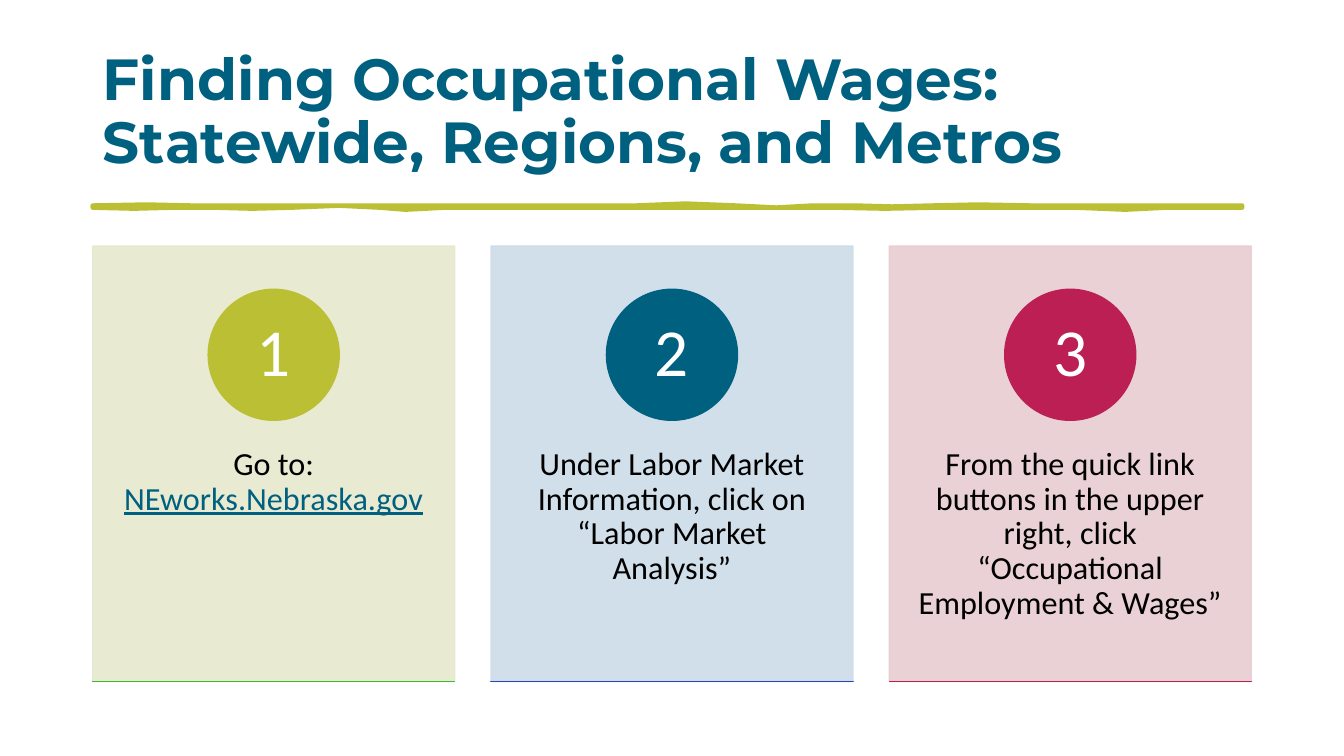
from lxml import etree
from pptx import Presentation
from pptx.dml.color import RGBColor
from pptx.enum.shapes import MSO_SHAPE
from pptx.enum.text import MSO_ANCHOR, MSO_AUTO_SIZE, PP_ALIGN
from pptx.oxml.ns import qn
from pptx.util import Inches, Pt

COLORS = {
    "teal": "00607F", "lime": "BABF33", "crimson": "BB1F53",
    "green": "34BE2F", "blue": "2743BD",
    "pale_lime": "E7E8CE", "pale_blue": "CDDCE8", "pale_rose": "E7CDD1",
    "black": "000000", "white": "FFFFFF",
}

# Card colour, circle colour, base line colour, text, web address
STEPS = [
    ("pale_lime", "lime", "green", "Go to: ", "NEworks.Nebraska.gov"),
    ("pale_blue", "teal", "blue",
     "Under Labor Market Information, click on “Labor Market Analysis”", ""),
    ("pale_rose", "crimson", "crimson",
     "From the quick link buttons in the upper right, click "
     "“Occupational Employment & Wages”", ""),
]

# Brush stroke outline: upper edge from left to right, then lower edge back
STROKE_POINTS = [
    (0.92, 2.04), (1.45, 2.03), (1.9, 2.04), (2.44, 2.04), (3.31, 2.04),
    (3.84, 2.04), (4.6, 2.04), (5.48, 2.04), (5.89, 2.04), (6.31, 2.04),
    (6.8, 2.02), (7.3, 2.04), (7.7, 2.06), (8.06, 2.04), (8.48, 2.04),
    (8.85, 2.05), (9.24, 2.04), (9.7, 2.03), (10.23, 2.04), (10.87, 2.04),
    (11.52, 2.04), (12.32, 2.04), (12.32, 2.06), (11.56, 2.06), (11.16, 2.08),
    (10.68, 2.06), (9.81, 2.06), (9.28, 2.06), (8.78, 2.07), (8.29, 2.06),
    (7.53, 2.06), (7.11, 2.06), (6.35, 2.06), (5.7, 2.06), (5.06, 2.06),
    (4.41, 2.06), (4.02, 2.08), (3.77, 2.06), (3.36, 2.04), (2.89, 2.06),
    (2.5, 2.07), (2.13, 2.06), (1.71, 2.06), (1.33, 2.07), (0.92, 2.06),
]


def rgb(name):
    return RGBColor.from_string(COLORS[name])


def add_text(para, text, font="Calibri", size=23, color="black", bold=False, underline=False):
    span = para.add_run()
    span.text = text
    span.font.name = font
    span.font.size = Pt(size)
    span.font.bold = bold
    span.font.underline = underline
    span.font.color.rgb = rgb(color)


def paint(shape, color, line_width=1):
    shape.shadow.inherit = False
    shape.fill.solid()
    shape.fill.fore_color.rgb = rgb(color)
    shape.line.color.rgb = rgb(color)
    shape.line.width = Pt(line_width)


def add_painted(page, kind, left, top, width, height, color):
    shape = page.shapes.add_shape(
        kind, Inches(left), Inches(top), Inches(width), Inches(height))
    paint(shape, color)
    return shape


def set_frame(frame, anchor, align, side=0.1, end=0.05):
    """Format the text frame and return its first paragraph."""
    frame.word_wrap = True
    frame.auto_size = MSO_AUTO_SIZE.NONE
    frame.vertical_anchor = anchor
    frame.margin_left = frame.margin_right = Inches(side)
    frame.margin_top = frame.margin_bottom = Inches(end)
    para = frame.paragraphs[0]
    para.alignment = align
    para.line_spacing = 0.9
    return para


def add_title(page, left, top, width, height):
    title = page.shapes.title
    title.left, title.top = Inches(left), Inches(top)
    title.width, title.height = Inches(width), Inches(height)
    para = set_frame(title.text_frame, MSO_ANCHOR.MIDDLE, PP_ALIGN.LEFT)
    style = dict(font="Montserrat", size=41.4, color="teal", bold=True)
    add_text(para, "Finding Occupational Wages:", **style)
    para.add_line_break()
    add_text(para, "Statewide, Regions, and Metros", **style)


def add_brush_stroke(page):
    start, *points = [(Inches(x), Inches(y)) for x, y in STROKE_POINTS]
    builder = page.shapes.build_freeform(*start)
    builder.add_line_segments(points, close=True)
    paint(builder.convert_to_shape(), "lime", 3.25)


def add_card(page, left, top, width, height, number, step):
    card_color, circle_color, base_color, text, address = step
    card = add_painted(page, MSO_SHAPE.RECTANGLE, left, top, width, height, card_color)
    for color in card._element.spPr.iter(qn("a:srgbClr")):
        etree.SubElement(color, qn("a:alpha")).set("val", "90000")

    box = page.shapes.add_textbox(
        Inches(left), Inches(top + 1.64), Inches(width), Inches(2.59))
    para = set_frame(box.text_frame, MSO_ANCHOR.TOP, PP_ALIGN.CENTER, 0.28, 0.36)
    add_text(para, text)
    if address:
        add_text(para, address, color="teal", underline=True)

    diameter = 1.3
    circle = add_painted(page, MSO_SHAPE.OVAL, left + (width - diameter) / 2, top + 0.43,
                         diameter, diameter, circle_color)
    para = set_frame(circle.text_frame, MSO_ANCHOR.MIDDLE, PP_ALIGN.CENTER, 0.1, 0.01)
    add_text(para, str(number), size=48, color="white")

    add_painted(page, MSO_SHAPE.RECTANGLE, left, top + height, width, 0, base_color)


def add_cards(page, left, top, width, height, gap=0.36):
    card_width = (width - gap * (len(STEPS) - 1)) / len(STEPS)
    for index, step in enumerate(STEPS):
        add_card(page, left + index * (card_width + gap), top, card_width, height,
                 index + 1, step)


def main():
    deck = Presentation()
    deck.slide_width, deck.slide_height = Inches(13.33), Inches(7.5)
    page = deck.slides.add_slide(deck.slide_layouts[5])
    add_title(page, 0.92, 0.4, 11.5, 1.45)
    add_brush_stroke(page)
    add_cards(page, 0.92, 2.44, 11.49, 4.32)
    deck.save("out.pptx")


if __name__ == "__main__":
    main()
